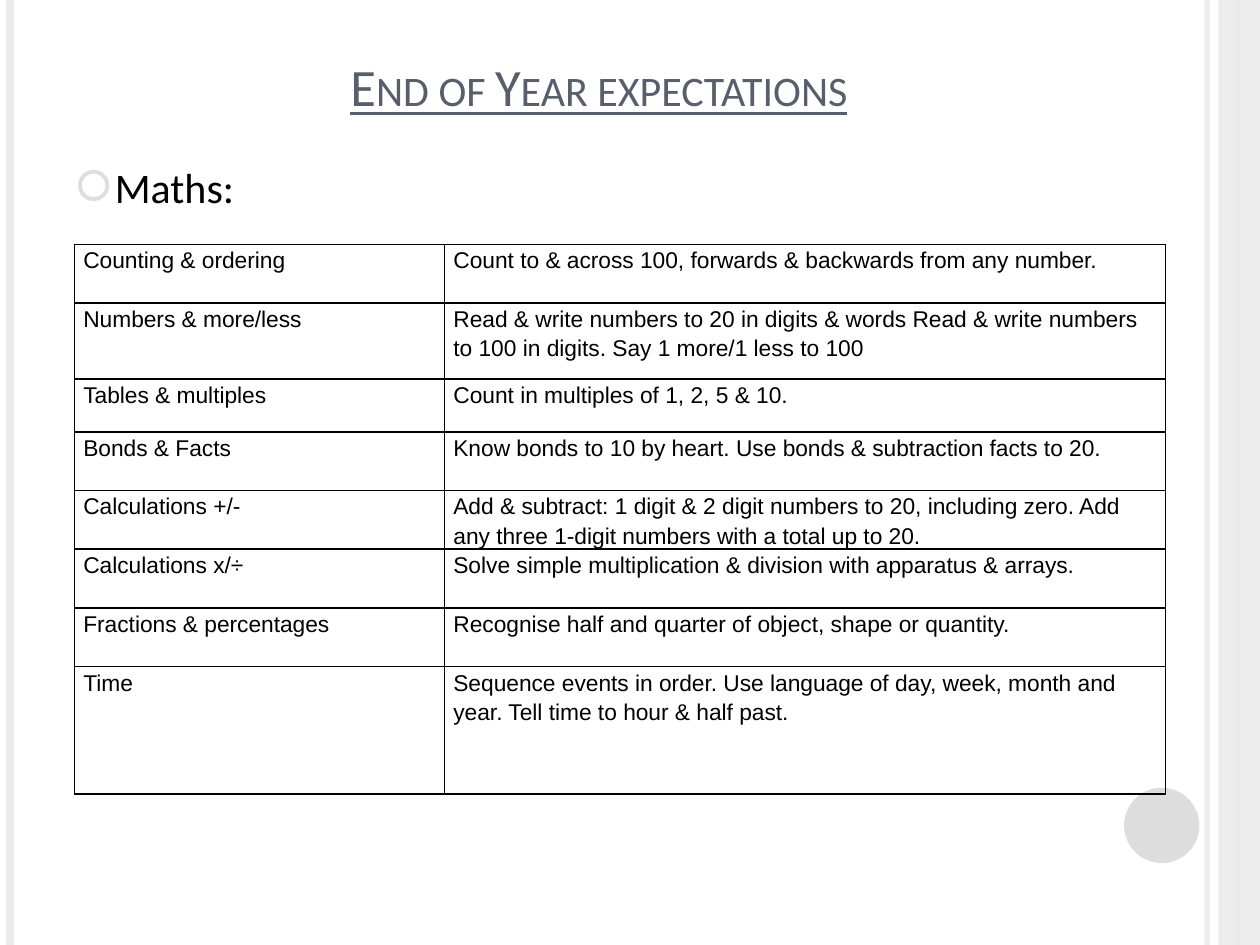
from dataclasses import dataclass

import pptx
import pptx.dml.color
import pptx.enum.shapes
import pptx.enum.text
import pptx.oxml
import pptx.oxml.ns
import pptx.util
from lxml import etree

Cm = pptx.util.Cm
Pt = pptx.util.Pt
qn = pptx.oxml.ns.qn

SLIDE_WIDTH, SLIDE_HEIGHT = 25.4, 19.05
PALE, GREY, SLATE, BLACK = "EBEBEB", "DDDDDD", "575F6D", "000000"


@dataclass
class Stripe:
    """A full-height vertical line: position in cm, width in points."""
    x: float
    color: str
    width: float
    opacity: int = 100


@dataclass
class Expectation:
    topic: str
    target: str
    height: float


STRIPES = [
    Stripe(24.33, PALE, 3, 93),
    Stripe(0.2, PALE, 4.5),
    Stripe(24.97, GREY, 1.5),
    Stripe(24.77, GREY, 0.75),
]

EXPECTATIONS = [
    Expectation("Counting & ordering",
                "Count to & across 100, forwards & backwards from any number.", 1.18),
    Expectation("Numbers & more/less",
                "Read & write numbers to 20 in digits & words Read & write numbers "
                "to 100 in digits. Say 1 more/1 less to 100", 1.53),
    Expectation("Tables & multiples", "Count in multiples of 1, 2, 5 & 10.", 1.07),
    Expectation("Bonds & Facts",
                "Know bonds to 10 by heart. Use bonds & subtraction facts to 20.", 1.18),
    Expectation("Calculations +/-",
                "Add & subtract: 1 digit & 2 digit numbers to 20, including zero. "
                "Add any three 1-digit numbers with a total up to 20.", 1.18),
    Expectation("Calculations x/÷",
                "Solve simple multiplication & division with apparatus & arrays.", 1.19),
    Expectation("Fractions & percentages",
                "Recognise half and quarter of object, shape or quantity.", 1.18),
    Expectation("Time",
                "Sequence events in order. Use language of day, week, month and year. "
                "Tell time to hour & half past.", 2.57),
]


def rgb(color: str) -> pptx.dml.color.RGBColor:
    return pptx.dml.color.RGBColor.from_string(color)


def set_opacity(element, percent: int) -> None:
    color = next(element.iter(qn("a:srgbClr")))
    etree.SubElement(color, qn("a:alpha"), val=str(percent * 1000))


def write(frame, text: str, *, font: str, size: float, color: str,
          underline: bool = False, small_caps: bool = False,
          align=None, line_spacing: float = 1.0):
    paragraph = frame.paragraphs[0]
    paragraph.alignment = align
    paragraph.line_spacing = line_spacing
    paragraph.space_before = Pt(0)
    run = paragraph.add_run()
    run.text = text
    run.font.name = font
    run.font.size = Pt(size)
    run.font.color.rgb = rgb(color)
    if underline:
        run.font.underline = True
    if small_caps:
        run.font._element.set("cap", "small")
    return paragraph


def place(shape, left: float, top: float, width: float, height: float) -> None:
    shape.left, shape.top = Cm(left), Cm(top)
    shape.width, shape.height = Cm(width), Cm(height)


def add_stripe(slide, stripe: Stripe) -> None:
    line = slide.shapes.add_connector(
        pptx.enum.shapes.MSO_CONNECTOR.STRAIGHT,
        Cm(stripe.x), Cm(0), Cm(stripe.x), Cm(SLIDE_HEIGHT))
    line.line.color.rgb = rgb(stripe.color)
    line.line.width = Pt(stripe.width)
    properties = line._element.spPr
    if stripe.opacity < 100:
        set_opacity(properties, stripe.opacity)
    etree.SubElement(properties, qn("a:effectLst"))


def add_filled(slide, kind, box: tuple, color: str, opacity: int = 100) -> None:
    shape = slide.shapes.add_shape(kind, *map(Cm, box))
    shape.shadow.inherit = False
    shape.fill.solid()
    shape.fill.fore_color.rgb = rgb(color)
    shape.line.fill.background()
    if opacity < 100:
        set_opacity(shape._element.spPr, opacity)


def set_bullet(paragraph, character: str, color: str, indent: float) -> None:
    properties = paragraph._p.get_or_add_pPr()
    properties.set("marL", str(Cm(indent)))
    properties.set("indent", str(-Cm(indent)))
    bullet_color = etree.SubElement(properties, qn("a:buClr"))
    etree.SubElement(bullet_color, qn("a:srgbClr"), val=color)
    etree.SubElement(properties, qn("a:buChar"), char=character)


def set_borders(cell, color: str, width: float) -> None:
    properties = cell._tc.get_or_add_tcPr()
    for position, side in enumerate(("a:lnL", "a:lnR", "a:lnT", "a:lnB")):
        border = etree.Element(qn(side), w=str(Pt(width)))
        fill = etree.SubElement(border, qn("a:solidFill"))
        etree.SubElement(fill, qn("a:srgbClr"), val=color)
        properties.insert(position, border)


def add_expectations(slide, rows: list[Expectation]) -> None:
    column_widths = (7.46, 14.53)
    table = slide.shapes.add_table(
        len(rows), 2, Cm(1.5), Cm(4.93), Cm(sum(column_widths)),
        Cm(sum(row.height for row in rows))).table
    table.first_row = table.horz_banding = False
    for column, width in zip(table.columns, column_widths):
        column.width = Cm(width)
    for table_row, row in zip(table.rows, rows):
        table_row.height = Cm(row.height)
        for cell, text in zip(table_row.cells, (row.topic, row.target)):
            cell.margin_left = cell.margin_right = Cm(0.18)
            cell.margin_top = cell.margin_bottom = 0
            cell.fill.background()
            set_borders(cell, BLACK, 1)
            write(cell.text_frame, text, font="Arial", size=13, color=BLACK,
                  line_spacing=1.15)


def main() -> None:
    presentation = pptx.Presentation()
    presentation.slide_width = Cm(SLIDE_WIDTH)
    presentation.slide_height = Cm(SLIDE_HEIGHT)
    slide = presentation.slides.add_slide(presentation.slide_layouts[1])

    shapes = pptx.enum.shapes.MSO_SHAPE
    for stripe in STRIPES:
        add_stripe(slide, stripe)
    add_filled(slide, shapes.RECTANGLE, (24.56, 0, 0.84, SLIDE_HEIGHT), PALE, 86)
    add_filled(slide, shapes.OVAL, (22.66, 15.88, 1.52, 1.52), GREY)

    title, body = slide.placeholders
    place(title, 1.7, 0.74, 20.75, 1.75)
    place(body, 1.3, 3.12, 20.75, 13.54)
    for placeholder in (title, body):
        placeholder.text_frame.auto_size = pptx.enum.text.MSO_AUTO_SIZE.NONE
    title.text_frame.vertical_anchor = pptx.enum.text.MSO_ANCHOR.BOTTOM
    write(title.text_frame, "End of Year expectations", font="Calibri", size=30,
          color=SLATE, underline=True, small_caps=True,
          align=pptx.enum.text.PP_ALIGN.CENTER)
    subject = write(body.text_frame, "Maths:", font="Calibri", size=24, color=BLACK)
    set_bullet(subject, "🞆", GREY, 0.76)

    add_expectations(slide, EXPECTATIONS)
    presentation.save("out.pptx")


if __name__ == "__main__":
    main()
